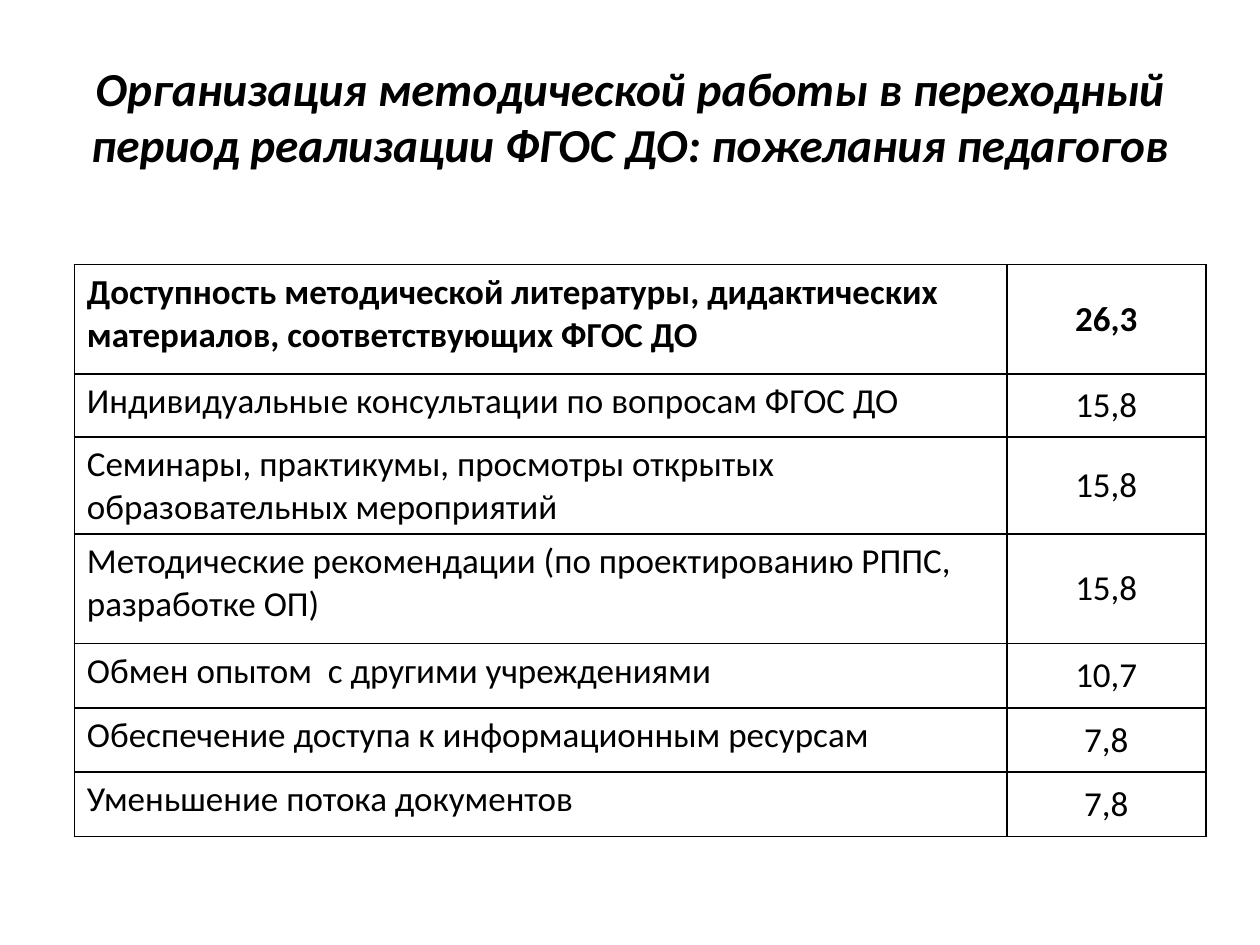
from dataclasses import dataclass

from lxml.etree import SubElement
from pptx import Presentation
from pptx.dml.color import RGBColor
from pptx.enum.text import MSO_ANCHOR, PP_ALIGN
from pptx.oxml.ns import qn
from pptx.util import Inches, Pt

SLIDE_WIDTH, SLIDE_HEIGHT = 10, 7.5
FONT = "Calibri"
BLACK, WHITE = "000000", "FFFFFF"
COLUMN_WIDTHS = (7.4, 1.58)


@dataclass(frozen=True)
class Wish:
    """One wish of the teachers with its share and row height."""

    text: str
    share: str
    height: float
    bold: bool = False


WISHES = (
    Wish("Доступность методической литературы, дидактических материалов, "
         "соответствующих ФГОС ДО", "26,3", 0.87, True),
    Wish("Индивидуальные консультации по вопросам ФГОС ДО", "15,8", 0.5),
    Wish("Семинары, практикумы, просмотры открытых образовательных мероприятий",
         "15,8", 0.77),
    Wish("Методические рекомендации (по проектированию РППС, разработке ОП)",
         "15,8", 0.87),
    Wish("Обмен опытом  с другими учреждениями", "10,7", 0.51),
    Wish("Обеспечение доступа к информационным ресурсам", "7,8", 0.51),
    Wish("Уменьшение потока документов", "7,8", 0.51),
)


def color(value: str) -> RGBColor:
    """Turn a hex string into a colour."""
    return RGBColor.from_string(value)


def write(frame, text: str, size: float, align: PP_ALIGN,
          bold: bool = False, italic: bool = False) -> None:
    """Write one run into the first paragraph of a text frame."""
    para = frame.paragraphs[0]
    para.alignment = align
    span = para.add_run()
    span.text = text
    span.font.name = FONT
    span.font.size = Pt(size)
    span.font.bold = bold
    span.font.italic = italic
    span.font.color.rgb = color(BLACK)


def add_borders(cell, width: float = 1) -> None:
    """Draw a solid black line on all four sides of a cell."""
    properties = cell._tc.get_or_add_tcPr()
    for position, side in enumerate(("lnL", "lnR", "lnT", "lnB")):
        line = SubElement(properties, qn(f"a:{side}"), w=str(Pt(width)))
        fill = SubElement(line, qn("a:solidFill"))
        SubElement(fill, qn("a:srgbClr"), val=BLACK)
        properties.insert(position, line)


def add_title(page, text: str) -> None:
    """Add the centred heading across the top of the slide."""
    box = page.shapes.add_textbox(
        Inches(0.05 * SLIDE_WIDTH), Inches(0.13),
        Inches(0.9 * SLIDE_WIDTH), Inches(0.21 * SLIDE_HEIGHT))
    frame = box.text_frame
    frame.word_wrap = True
    frame.vertical_anchor = MSO_ANCHOR.MIDDLE
    write(frame, text, 27, PP_ALIGN.CENTER, bold=True, italic=True)


def fill_cell(cell, text: str, align: PP_ALIGN, anchor: MSO_ANCHOR,
              bold: bool) -> None:
    """Set the text, fill and borders of a cell."""
    cell.fill.solid()
    cell.fill.fore_color.rgb = color(WHITE)
    cell.vertical_anchor = anchor
    write(cell.text_frame, text, 20, align, bold)
    add_borders(cell)


def add_wishes(page, wishes: tuple[Wish, ...]) -> None:
    """Add the table with one row for each wish."""
    table = page.shapes.add_table(
        len(wishes), len(COLUMN_WIDTHS),
        Inches(0.059 * SLIDE_WIDTH), Inches(0.28 * SLIDE_HEIGHT),
        Inches(sum(COLUMN_WIDTHS)),
        Inches(sum(wish.height for wish in wishes))).table
    for column, width in zip(table.columns, COLUMN_WIDTHS):
        column.width = Inches(width)
    for row, wish in zip(table.rows, wishes):
        row.height = Inches(wish.height)
        label, share = row.cells
        fill_cell(label, wish.text, PP_ALIGN.LEFT, MSO_ANCHOR.TOP, wish.bold)
        fill_cell(share, wish.share, PP_ALIGN.CENTER, MSO_ANCHOR.MIDDLE, wish.bold)


def main() -> None:
    """Build the slide and save the deck."""
    deck = Presentation()
    deck.slide_width = Inches(SLIDE_WIDTH)
    deck.slide_height = Inches(SLIDE_HEIGHT)
    page = deck.slides.add_slide(deck.slide_layouts[6])
    add_title(page, "Организация методической работы в переходный период "
                    "реализации ФГОС ДО: пожелания педагогов")
    add_wishes(page, WISHES)
    deck.save("out.pptx")


if __name__ == "__main__":
    main()
